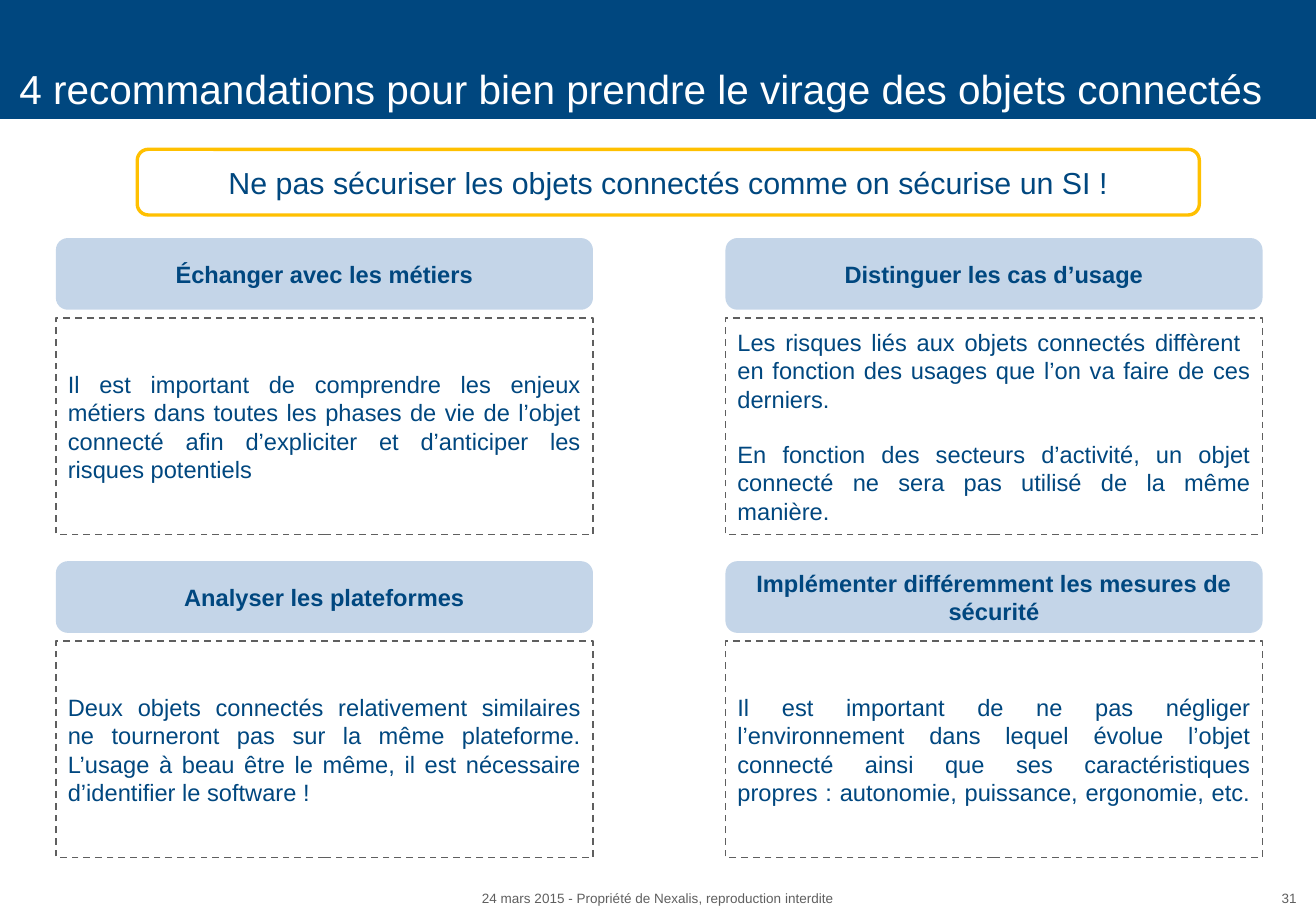
from pptx import Presentation
from pptx.dml.color import RGBColor
from pptx.enum.dml import MSO_LINE
from pptx.enum.shapes import MSO_SHAPE
from pptx.enum.text import MSO_ANCHOR, MSO_AUTO_SIZE, PP_ALIGN
from pptx.util import Inches, Pt

ROUNDED, SQUARE = MSO_SHAPE.ROUNDED_RECTANGLE, MSO_SHAPE.RECTANGLE
LEFT, CENTER, RIGHT, JUSTIFY = (
    PP_ALIGN.LEFT, PP_ALIGN.CENTER, PP_ALIGN.RIGHT, PP_ALIGN.JUSTIFY)
MIDDLE, BOTTOM = MSO_ANCHOR.MIDDLE, MSO_ANCHOR.BOTTOM
NO_AUTOFIT = MSO_AUTO_SIZE.NONE
DASH = MSO_LINE.DASH

WIDTH, HEIGHT = 10.83, 7.5
NAVY, PALE_BLUE, GOLD, GREY, WHITE = "00477F", "C4D5E8", "FFC000", "5F5F5F", "FFFFFF"
FONT = "Arial"

GRID_LEFT, GRID_TOP = 0.46, 1.96
COLUMN_STEP, ROW_STEP = 5.51, 2.66
CARD_WIDTH, HEADING_HEIGHT, BODY_HEIGHT = 4.42, 0.59, 1.78
BODY_OFFSET = 0.66
COLUMNS = 2

RECOMMENDATIONS = [
    ("Échanger avec les métiers",
     ["Il est important de comprendre les enjeux métiers dans toutes les phases "
      "de vie de l’objet connecté afin d’expliciter et d’anticiper les risques potentiels"]),
    ("Distinguer les cas d’usage",
     ["Les risques liés aux objets connectés diffèrent  en fonction des usages "
      "que l’on va faire de ces derniers.",
      "En fonction des secteurs d’activité, un objet connecté ne sera pas utilisé "
      "de la même manière."]),
    ("Analyser les plateformes",
     ["Deux objets connectés relativement similaires ne tourneront pas sur la même "
      "plateforme. L’usage à beau être le même, il est nécessaire d’identifier le software !"]),
    ("Implémenter différemment les mesures de sécurité",
     ["Il est important de ne pas négliger l’environnement dans lequel évolue l’objet "
      "connecté ainsi que ses caractéristiques propres : autonomie, puissance, "
      "ergonomie, etc. "]),
]


def rgb(value):
    return RGBColor.from_string(value)


def box(left, top, width, height):
    return [Inches(length) for length in (left, top, width, height)]


def write(frame, paragraphs, size, color=NAVY, align=CENTER, anchor=MIDDLE,
          bold=False, insets=(0.1, 0.05, 0.1, 0.05)):
    """Fill a text frame, with one line of space between paragraphs."""
    frame.word_wrap = True
    frame.auto_size = NO_AUTOFIT
    frame.vertical_anchor = anchor
    (frame.margin_left, frame.margin_top,
     frame.margin_right, frame.margin_bottom) = map(Inches, insets)
    frame.text = "\n".join(paragraphs)
    for index, paragraph in enumerate(frame.paragraphs):
        paragraph.alignment = align
        paragraph.space_before = Pt(size * 1.15 if index else 0)
        for run in paragraph.runs:
            run.font.name = FONT
            run.font.size = Pt(size)
            run.font.bold = bold
            run.font.color.rgb = rgb(color)


def add_panel(slide, outline, bounds, fill, line=None, line_width=1, dash=None):
    panel = slide.shapes.add_shape(outline, *bounds)
    panel.shadow.inherit = False
    panel.fill.solid()
    panel.fill.fore_color.rgb = rgb(fill)
    if line:
        panel.line.color.rgb = rgb(line)
        panel.line.width = Pt(line_width)
        panel.line.dash_style = dash
    else:
        panel.line.fill.background()
    return panel.text_frame


def add_title(slide, text):
    title = slide.shapes.title
    title.left, title.top, title.width, title.height = box(0, -0.03, WIDTH, 1.01)
    title.fill.solid()
    title.fill.fore_color.rgb = rgb(NAVY)
    write(title.text_frame, [text], 24, WHITE, LEFT, BOTTOM,
          insets=(0.16, 0.08, 0.1, 0.05))


def add_footer(slide, text, left, width, align):
    footer = slide.shapes.add_textbox(*box(left, 7.29, width, 0.21))
    write(footer.text_frame, [text], 8, GREY, align)


def add_recommendation(slide, index, heading, body):
    row, column = divmod(index, COLUMNS)
    left = GRID_LEFT + column * COLUMN_STEP
    top = GRID_TOP + row * ROW_STEP
    body_frame = add_panel(
        slide, SQUARE, box(left, top + BODY_OFFSET, CARD_WIDTH, BODY_HEIGHT),
        WHITE, GREY, dash=DASH)
    write(body_frame, body, 14, align=JUSTIFY)
    heading_frame = add_panel(
        slide, ROUNDED, box(left, top, CARD_WIDTH, HEADING_HEIGHT), PALE_BLUE)
    write(heading_frame, [heading], 14, bold=True, insets=(0.08,) * 4)


def main():
    deck = Presentation()
    deck.slide_width, deck.slide_height = Inches(WIDTH), Inches(HEIGHT)
    slide = deck.slides.add_slide(deck.slide_layouts.get_by_name("Title Only"))

    add_title(slide, "4 recommandations pour bien prendre le virage des objets connectés")
    message = add_panel(slide, ROUNDED, box(1.13, 1.23, 8.74, 0.54), WHITE, GOLD, 2)
    write(message, ["Ne pas sécuriser les objets connectés comme on sécurise un SI !"], 18)
    for index, (heading, body) in enumerate(RECOMMENDATIONS):
        add_recommendation(slide, index, heading, body)
    add_footer(slide, "24 mars 2015 - Propriété de Nexalis, reproduction interdite",
               0, WIDTH, CENTER)
    add_footer(slide, "31", 10.14, 0.63, RIGHT)

    deck.save("out.pptx")


if __name__ == "__main__":
    main()
